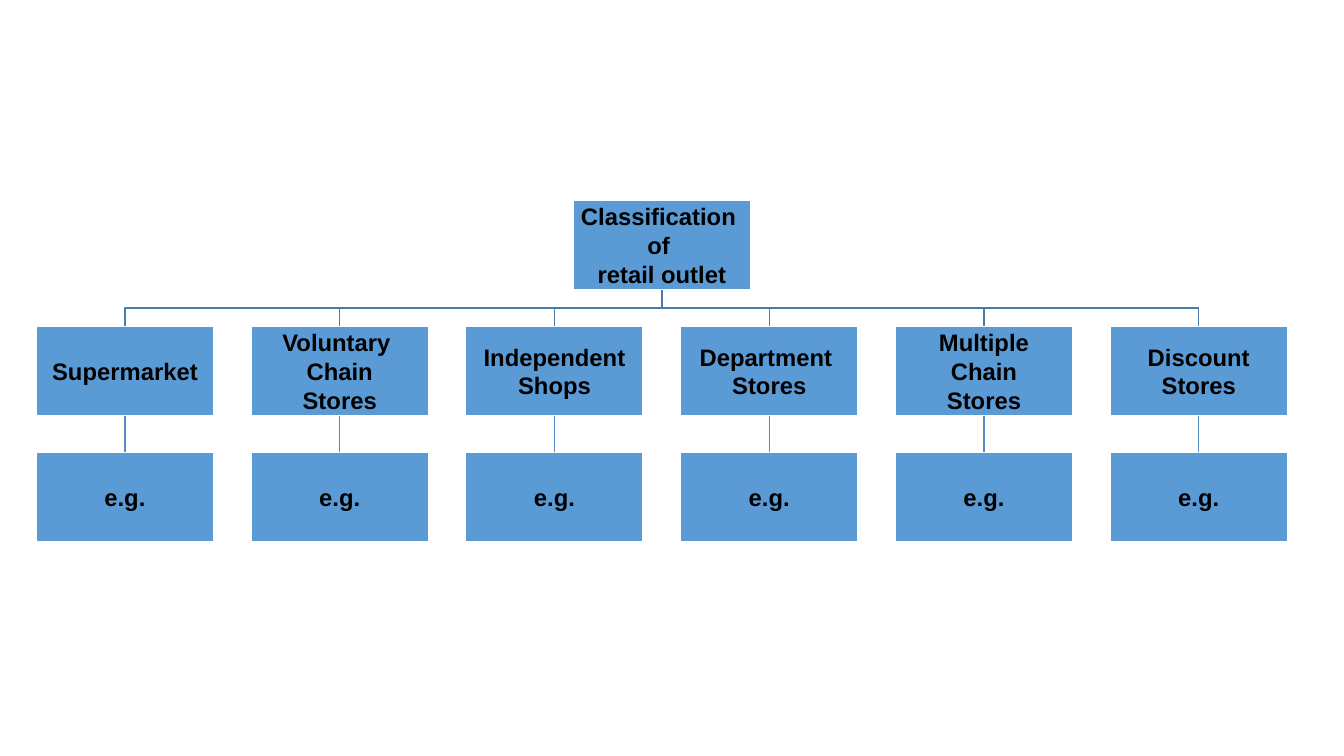
from pptx import Presentation
from pptx.dml.color import RGBColor
from pptx.enum.shapes import MSO_CONNECTOR, MSO_SHAPE
from pptx.enum.text import MSO_ANCHOR, PP_ALIGN
from pptx.oxml.ns import qn
from pptx.util import Inches, Pt
from lxml.etree import SubElement

ROOT = ["Classification ", "of ", "retail outlet"]
OUTLETS = [
    ["Supermarket"],
    ["Voluntary ", "Chain", "Stores"],
    ["Independent", "Shops"],
    ["Department ", "Stores"],
    ["Multiple", "Chain", "Stores"],
    ["Discount", "Stores"],
]
EXAMPLE = ["e.g."]

SLIDE_WIDTH, SLIDE_HEIGHT = 13.33, 7.5
BOX_WIDTH, BOX_HEIGHT = 1.76, 0.88
COLUMN_STEP, ROW_STEP = 2.13, 1.25
LEFT, TOP = 0.36, 1.99
BOX_FILL, BOX_LINE, TEXT = "5B9BD5", "FFFFFF", "000000"
BRANCH_LINE, EXAMPLE_LINE = "497CAB", "538DC1"
FONT = {"name": "Arial", "size": Pt(17), "bold": True}
FRAME = {"word_wrap": True, "vertical_anchor": MSO_ANCHOR.MIDDLE}
MARGINS = ("margin_left", "margin_top", "margin_right", "margin_bottom")


def set_line(shape, color):
    shape.line.color.rgb = RGBColor.from_string(color)
    shape.line.width = Pt(1)


def column_left(column):
    return LEFT + column * COLUMN_STEP


def column_center(column):
    return column_left(column) + BOX_WIDTH / 2


def row_top(row):
    return TOP + row * ROW_STEP


def row_bottom(row):
    return row_top(row) + BOX_HEIGHT


def add_box(slide, column, row, lines):
    box = slide.shapes.add_shape(
        MSO_SHAPE.RECTANGLE, Inches(column_left(column)), Inches(row_top(row)),
        Inches(BOX_WIDTH), Inches(BOX_HEIGHT))
    box.shadow.inherit = False
    box.fill.solid()
    box.fill.fore_color.rgb = RGBColor.from_string(BOX_FILL)
    set_line(box, BOX_LINE)
    frame = box.text_frame
    for name, value in {**FRAME, **dict.fromkeys(MARGINS, Inches(0.01))}.items():
        setattr(frame, name, value)
    for index, line in enumerate(lines):
        paragraph = frame.add_paragraph() if index else frame.paragraphs[0]
        paragraph.alignment = PP_ALIGN.CENTER
        run = paragraph.add_run()
        run.text = line
        for name, value in FONT.items():
            setattr(run.font, name, value)
        run.font.color.rgb = RGBColor.from_string(TEXT)


def add_branch(slide, root_column, column):
    """Draw the elbow from the root box down to an outlet box."""
    start, end = Inches(column_center(root_column)), Inches(column_center(column))
    top, bottom = Inches(row_bottom(0)), Inches(row_top(1))
    middle = (top + bottom) // 2
    builder = slide.shapes.build_freeform(start, top)
    builder.add_line_segments([(start, middle), (end, middle), (end, bottom)], close=False)
    branch = builder.convert_to_shape()
    branch.shadow.inherit = False
    branch.fill.background()
    set_line(branch, BRANCH_LINE)


def add_example_link(slide, column):
    center = Inches(column_center(column))
    link = slide.shapes.add_connector(
        MSO_CONNECTOR.STRAIGHT, center, Inches(row_bottom(1)), center, Inches(row_top(2)))
    set_line(link, EXAMPLE_LINE)
    SubElement(link._element.spPr, qn("a:effectLst"))


def main():
    presentation = Presentation()
    presentation.slide_width = Inches(SLIDE_WIDTH)
    presentation.slide_height = Inches(SLIDE_HEIGHT)
    slide = presentation.slides.add_slide(presentation.slide_layouts[6])
    root_column = (len(OUTLETS) - 1) / 2

    for column in reversed(range(len(OUTLETS))):
        add_example_link(slide, column)
        add_branch(slide, root_column, column)
    add_box(slide, root_column, 0, ROOT)
    for column, outlet in enumerate(OUTLETS):
        add_box(slide, column, 1, outlet)
        add_box(slide, column, 2, EXAMPLE)

    presentation.save("out.pptx")


if __name__ == "__main__":
    main()
